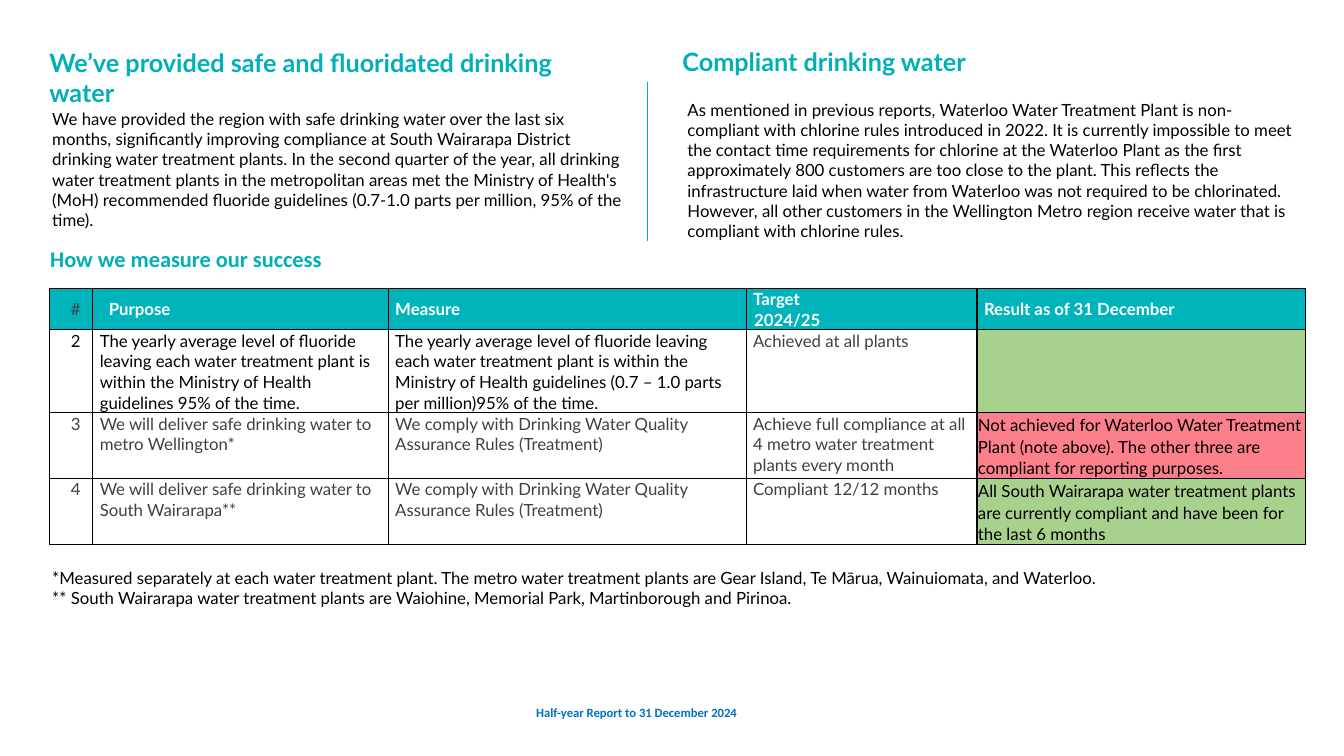
from copy import deepcopy

from pptx import Presentation
from pptx.dml.color import RGBColor
from pptx.enum.shapes import MSO_CONNECTOR
from pptx.enum.text import MSO_ANCHOR, MSO_AUTO_SIZE, PP_ALIGN
from pptx.oxml.ns import qn
from pptx.oxml.xmlchemy import OxmlElement
from pptx.util import Inches, Pt

LEFT, CENTER, JUSTIFY = PP_ALIGN.LEFT, PP_ALIGN.CENTER, PP_ALIGN.JUSTIFY
TOP, MIDDLE = MSO_ANCHOR.TOP, MSO_ANCHOR.MIDDLE

COLORS = {
    "teal": "00B0B9", "header": "00B4BC", "blue": "0070C0", "black": "000000",
    "gray": "404042", "white": "FFFFFF", "green": "A9D18E", "red": "FC808C",
}

TITLE = "We’ve provided safe and fluoridated drinking water"
HEADING = dict(size=18, color="teal", bold=True)
INDENTED = dict(margin=0.3)
TEXTS = [
    ("Half-year Report to 31 December 2024", (5.22, 6.96, 2.57, 0.24),
     dict(size=9, font="Calibri", color="blue", bold=True, spacing=0.9)),
    ("We have provided the region with safe drinking water over the last six months, significantly "
     "improving compliance at South Wairarapa District drinking water treatment plants. In the second "
     "quarter of the year, all drinking water treatment plants in the metropolitan areas met the "
     "Ministry of Health's (MoH) recommended fluoride guidelines (0.7-1.0 parts per million, 95% of "
     "the time).", (0.12, 1.03, 6.2, 1.31), INDENTED),
    ("Compliant drinking water", (6.67, 0.41, 5.65, 0.4), HEADING),
    ("As mentioned in previous reports, Waterloo Water Treatment Plant is non-compliant with chlorine "
     "rules introduced in 2022. It is currently impossible to meet the contact time requirements for "
     "chlorine at the Waterloo Plant as the first approximately 800 customers are too close to the "
     "plant. This reflects the infrastructure laid when water from Waterloo was not required to be "
     "chlorinated. However, all other customers in the Wellington Metro region receive water that is "
     "compliant with chlorine rules.", (6.42, 0.94, 6.52, 1.51), INDENTED),
    ("*Measured separately at each water treatment plant. The metro water treatment plants are Gear "
     "Island, Te Mārua, Wainuiomata, and Waterloo.\n** South Wairarapa water treatment plants are "
     "Waiohine, Memorial Park, Martinborough and Pirinoa.", (0.12, 5.58, 11.03, 0.5), INDENTED),
    ("How we measure our success", (0.4, 2.38, 5.96, 0.37),
     dict(size=16, font="Calibri", color="teal", bold=True)),
]

COLUMN_WIDTHS = [0.43, 2.93, 3.55, 2.29, 3.26]
ROW_HEIGHTS = [0.4, 0.82, 0.65, 0.65]
RULES = "We comply with Drinking Water Quality Assurance Rules (Treatment)"
FLUORIDE = ("The yearly average level of fluoride leaving each water treatment plant is within the "
            "Ministry of Health guidelines ")
ROWS = [
    ["#", "Purpose", "Measure", "Target\n2024/25", "Result as of 31 December"],
    ["2", FLUORIDE + "95% of the time.", FLUORIDE + "(0.7 – 1.0 parts per million)95% of the time.",
     "Achieved at all plants", ""],
    ["3", "We will deliver safe drinking water to metro Wellington*", RULES,
     "Achieve full compliance at all 4 metro water treatment plants every month",
     "Not achieved for Waterloo Water Treatment Plant (note above). The other three are compliant "
     "for reporting purposes."],
    ["4", "We will deliver safe drinking water to South Wairarapa**", RULES, "Compliant 12/12 months",
     "All South Wairarapa water treatment plants are currently compliant and have been for the last "
     "6 months"],
]
RESULT_FILLS = [None, "green", "red", "green"]
RESULT_COLUMN = 4


def rgb(name):
    return RGBColor.from_string(COLORS[name])


def write(frame, text, size=12, font="Lato", color="black", bold=False, align=LEFT,
          margin=0, indent=0, spacing=1.0, after=0):
    frame.word_wrap = True
    para = frame.paragraphs[0]
    para.text = text
    para.alignment = align
    para.line_spacing = spacing
    para.space_before, para.space_after = Pt(0), Pt(after)
    properties = para._p.get_or_add_pPr()
    properties.set("marL", str(Inches(margin)))
    properties.set("indent", str(Inches(indent)))
    for span in para.runs:
        span.font.size, span.font.name, span.font.bold = Pt(size), font, bold
        span.font.color.rgb = rgb(color)
    for line_break in para._p.findall(qn("a:br")):
        line_break.append(deepcopy(para.runs[0]._r.rPr))


def draw_borders(cell):
    properties = cell._tc.get_or_add_tcPr()
    for position, side in enumerate(("lnL", "lnR", "lnT", "lnB")):
        border = OxmlElement(f"a:{side}")
        border.set("w", str(Pt(1)))
        fill = OxmlElement("a:solidFill")
        color = OxmlElement("a:srgbClr")
        color.set("val", COLORS["black"])
        fill.append(color)
        border.append(fill)
        properties.insert(position, border)


def cell_format(row, column):
    if row and column == RESULT_COLUMN:
        return dict(spacing=1.07)
    look = dict(spacing=1.03, after=5.2, indent=-0.01)
    if column == 0:
        look.update(align=CENTER, margin=0.1)
    elif row == 0:
        look.update(margin=0.1 if column == 1 else 0.01, align=JUSTIFY if column == 1 else LEFT)
    if row == 0:
        look.update(bold=column > 0, color="white" if column else "gray")
    else:
        look["color"] = "black" if row == 1 and column < 3 else "gray"
    return look


def fill_cell(cell, row, column):
    is_result = row > 0 and column == RESULT_COLUMN
    side = 0.01 if is_result else 0.07
    cell.margin_left = cell.margin_right = Inches(side)
    cell.margin_top = Inches(0.01 if is_result else 0)
    cell.margin_bottom = 0
    cell.vertical_anchor = TOP if row else MIDDLE
    write(cell.text_frame, ROWS[row][column], **cell_format(row, column))
    fill_name = RESULT_FILLS[row] if is_result else None if row else "header"
    if fill_name:
        cell.fill.solid()
        cell.fill.fore_color.rgb = rgb(fill_name)
    else:
        cell.fill.background()
    draw_borders(cell)


def add_measures(page):
    frame = page.shapes.add_table(len(ROWS), len(COLUMN_WIDTHS), Inches(0.49), Inches(2.86),
                                  Inches(sum(COLUMN_WIDTHS)), Inches(sum(ROW_HEIGHTS)))
    table = frame.table
    table.first_row = table.horz_banding = False
    for column, width in zip(table.columns, COLUMN_WIDTHS):
        column.width = Inches(width)
    for row, height in zip(table.rows, ROW_HEIGHTS):
        row.height = Inches(height)
    for row in range(len(ROWS)):
        for column in range(len(COLUMN_WIDTHS)):
            fill_cell(table.cell(row, column), row, column)


def main():
    deck = Presentation()
    deck.slide_width, deck.slide_height = Inches(13.33), Inches(7.5)
    page = deck.slides.add_slide(deck.slide_layouts[5])

    title = page.shapes.title
    title.left, title.top, title.width, title.height = map(Inches, (0.39, 0.42, 5.65, 0.4))
    title.text_frame.vertical_anchor = TOP
    title.text_frame.auto_size = MSO_AUTO_SIZE.NONE
    write(title.text_frame, TITLE, **HEADING)

    for text, place, look in TEXTS:
        box = page.shapes.add_textbox(*map(Inches, place))
        write(box.text_frame, text, **look)

    divider = page.shapes.add_connector(MSO_CONNECTOR.STRAIGHT, *map(Inches, (6.42, 0.81, 6.42, 2.39)))
    divider.line.color.rgb = rgb("teal")
    divider.line.width = Pt(0.5)
    divider._element.spPr.append(OxmlElement("a:effectLst"))

    add_measures(page)
    deck.save("out.pptx")


if __name__ == "__main__":
    main()
